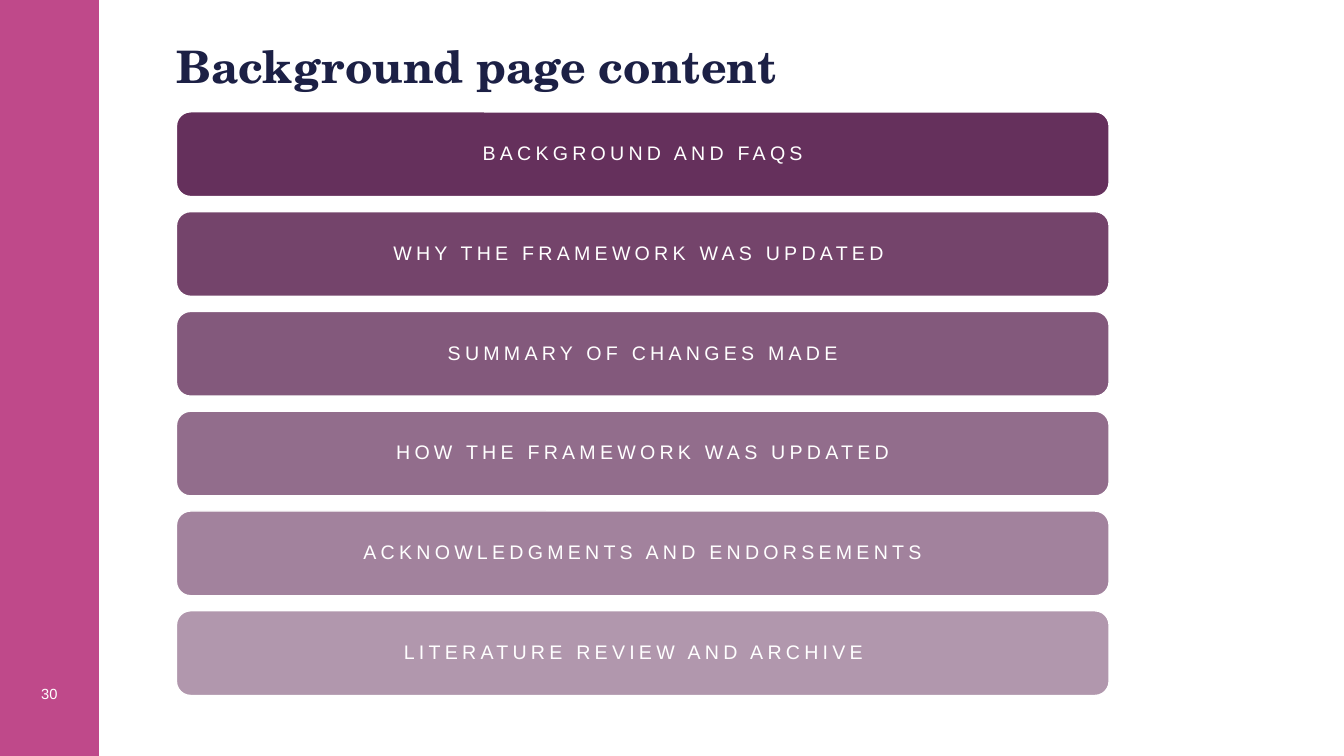
"""Build the background page content slide."""
from pptx import Presentation
from pptx import util as u
from pptx.dml.color import RGBColor
from pptx.enum import shapes, text
from pptx.oxml.ns import qn
from lxml import etree

PINK = RGBColor(0xBF, 0x49, 0x8A)
PLUM = RGBColor(0x65, 0x30, 0x5C)
NAVY = RGBColor(0x1C, 0x20, 0x45)
WHITE = RGBColor(0xFF, 0xFF, 0xFF)


def write(shape, words, size=14, font="Arial", color=WHITE, bold=False,
          align=text.PP_ALIGN.CENTER, anchor=text.MSO_ANCHOR.MIDDLE,
          left=0.1, right=0.1, space=None, line=0.9):
    frame = shape.text_frame
    frame.word_wrap = True
    frame.vertical_anchor = anchor
    frame.margin_left = u.Inches(left)
    frame.margin_right = u.Inches(right)
    para = frame.paragraphs[0]
    para.alignment = align
    para.line_spacing = line
    run = para.add_run()
    run.text = words
    run.font.size = u.Pt(size)
    run.font.name = font
    run.font.bold = bold
    run.font.color.rgb = color
    if space:
        run.font._element.set("spc", str(space * 100))


deck = Presentation()
deck.slide_width = u.Inches(13.33)
deck.slide_height = u.Inches(7.5)
slide = deck.slides.add_slide(deck.slide_layouts[6])

band = slide.shapes.add_shape(shapes.MSO_SHAPE.RECTANGLE, 0, 0,
                              u.Inches(0.98), u.Inches(7.5))
band.shadow.inherit = False
band.fill.solid()
band.fill.fore_color.rgb = PINK
band.line.fill.background()

number = slide.shapes.add_textbox(u.Inches(-0.01), u.Inches(6.74),
                                  u.Inches(1), u.Inches(0.29))
write(number, "30", size=10.5, line=1)

title = slide.shapes.add_textbox(u.Inches(1.67), u.Inches(0.4),
                                 u.Inches(9.74), u.Inches(0.43))
write(title, "Background page content", size=32, font="TeX Gyre Schola",
      color=NAVY, bold=True, align=text.PP_ALIGN.LEFT,
      anchor=text.MSO_ANCHOR.TOP, left=0.08)

topics = [
    ("BACKGROUND AND FAQS", 0.1),
    ("WHY THE FRAMEWORK WAS UPDATED", 0.18),
    ("SUMMARY OF CHANGES MADE", 0.1),
    ("HOW THE FRAMEWORK WAS UPDATED", 0.1),
    ("ACKNOWLEDGMENTS AND ENDORSEMENTS", 0.1),
    ("LITERATURE REVIEW AND ARCHIVE", 0.28),
]
for row, (topic, right) in enumerate(topics):
    bar = slide.shapes.add_shape(
        shapes.MSO_SHAPE.ROUNDED_RECTANGLE, u.Inches(1.75),
        u.Inches(1.11 + 0.99 * row), u.Inches(9.25), u.Inches(0.84))
    bar.shadow.inherit = False
    bar.fill.solid()
    bar.fill.fore_color.rgb = PLUM
    if row:
        tint = bar.fill._xPr.find(qn("a:solidFill"))[0]
        alpha = etree.SubElement(tint, qn("a:alpha"))
        alpha.set("val", str(100000 - 10000 * row))
    bar.line.color.rgb = WHITE
    bar.line.width = u.Pt(1)
    write(bar, topic, right=right, space=3)

deck.save("out.pptx")
